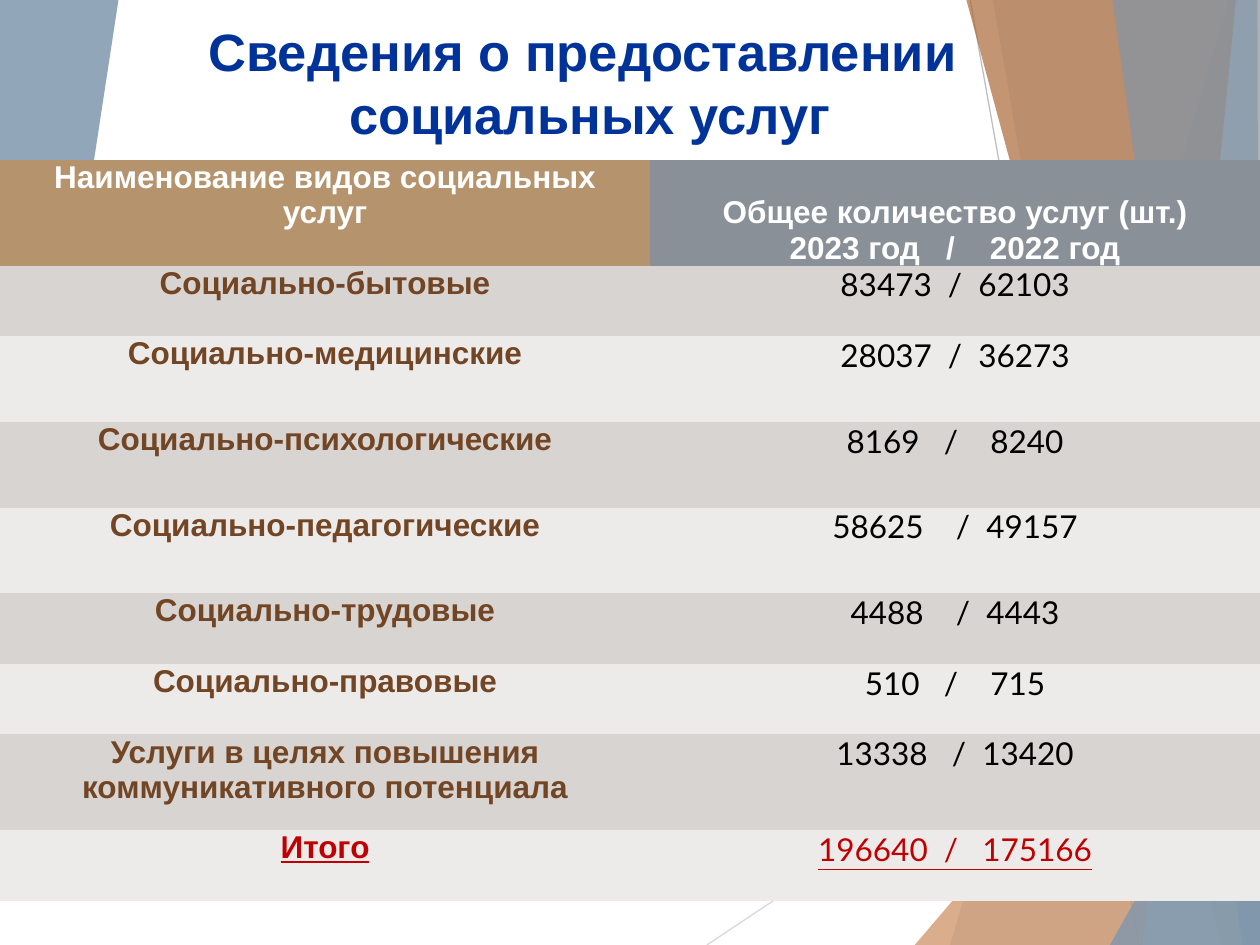
from lxml import etree
from pptx import Presentation
from pptx.dml.color import RGBColor
from pptx.enum.shapes import MSO_CONNECTOR
from pptx.enum.text import MSO_ANCHOR, PP_ALIGN
from pptx.oxml.ns import qn
from pptx.util import Inches, Pt

STRAIGHT = MSO_CONNECTOR.STRAIGHT
CENTER = PP_ALIGN.CENTER
TOP, MIDDLE, BOTTOM = MSO_ANCHOR.TOP, MSO_ANCHOR.MIDDLE, MSO_ANCHOR.BOTTOM
PLAIN_TABLE_STYLE = "{2D5ABB26-0587-4C30-8999-92F81FD0307C}"


def color(hex_string):
    return RGBColor.from_string(hex_string)


def add_run(para, text, font_name, size, hex_string, bold=False, underline=False):
    para.alignment = CENTER
    span = para.add_run()
    span.text = text
    span.font.name = font_name
    span.font.size = Pt(size)
    span.font.bold = bold
    span.font.underline = underline
    span.font.color.rgb = color(hex_string)


deck = Presentation()
deck.slide_width, deck.slide_height = Inches(10), Inches(7.5)
page = deck.slides.add_slide(deck.slide_layouts[5])

# Thin background lines
for x1, y1, x2, y2, gray in [
    (5.61, 7.5, 10.01, 4.57, "D9D9D9"),
    (7.7, 0, 9.04, 7.5, "BFBFBF"),
]:
    line = page.shapes.add_connector(
        STRAIGHT, Inches(x1), Inches(y1), Inches(x2), Inches(y2))
    line.line.color.rgb = color(gray)
    line.line.width = Pt(0.75)
    etree.SubElement(line._element.spPr, qn("a:effectLst"))

# Translucent background facets: fill, opacity in percent, corners
facets = [
    ("7E97AD", 30, [(9.75, 0), (7.54, 7.5), (10.02, 7.5), (10.01, 0)]),
    ("7E97AD", 20, [(7.88, 0), (9.19, 7.5), (10.01, 7.5), (10.01, 0)]),
    ("CC8E60", 72, [(7.26, 7.5), (10, 4.29), (10.01, 7.5)]),
    ("AA6837", 70, [(7.67, 0), (9.7, 7.5), (10.01, 7.5), (10.01, 0)]),
    ("B2C1CE", 70, [(9.81, 0), (9.07, 7.5), (10.01, 7.5), (10, 0)]),
    ("7E97AD", 65, [(8.83, 0), (9.86, 7.5), (10, 7.5), (9.98, 0)]),
    ("7E97AD", 80, [(8.81, 7.5), (10.01, 5.35), (10.01, 7.5)]),
    ("7E97AD", 85, [(-0.01, 0), (0.94, 0), (-0.01, 6.22)]),
]
for fill, opacity, corners in facets:
    points = [(Inches(x), Inches(y)) for x, y in corners]
    builder = page.shapes.build_freeform(*points[0])
    builder.add_line_segments(points[1:], close=True)
    facet = builder.convert_to_shape()
    facet.shadow.inherit = False
    facet.line.fill.background()
    facet.fill.solid()
    facet.fill.fore_color.rgb = color(fill)
    fill_color = facet._element.spPr.find(".//" + qn("a:srgbClr"))
    etree.SubElement(fill_color, qn("a:alpha"), val=str(opacity * 1000))

# Title
title = page.shapes.title
title.left, title.top = Inches(0), Inches(0.1)
title.width, title.height = Inches(9.25), Inches(1.1)
title.text_frame.vertical_anchor = MIDDLE
title.text_frame.word_wrap = True
para = title.text_frame.paragraphs[0]
para.line_spacing = Pt(36)
add_run(para, "Сведения о предоставлении", "Arial", 30, "003399", bold=True)
para.add_line_break()
add_run(para, " социальных услуг", "Arial", 30, "003399", bold=True)

# Table: row height, service, quantities
rows = [
    (0.84, "Наименование видов социальных услуг",
     "Общее количество услуг (шт.)\n2023 год   /    2022 год"),
    (0.56, "Социально-бытовые", "83473  /  62103"),
    (0.68, "Социально-медицинские", "28037  /  36273"),
    (0.68, "Социально-психологические", "8169   /    8240"),
    (0.68, "Социально-педагогические", "58625    /  49157"),
    (0.56, "Социально-трудовые", "4488    /  4443"),
    (0.56, "Социально-правовые", "510   /    715"),
    (0.76, "Услуги в целях повышения коммуникативного потенциала", "13338   /  13420"),
    (0.56, "Итого", "196640  /   175166"),
]
frame = page.shapes.add_table(
    len(rows), 2, Inches(0), Inches(1.27), Inches(10),
    Inches(sum(row[0] for row in rows)))
frame._element.find(".//" + qn("a:tableStyleId")).text = PLAIN_TABLE_STYLE
table = frame.table
table.horz_banding = False
table.columns[0].width, table.columns[1].width = Inches(5.16), Inches(4.84)

for row_index, (height, *texts) in enumerate(rows):
    table.rows[row_index].height = Inches(height)
    is_header = row_index == 0
    is_total = row_index == len(rows) - 1
    for column, text in enumerate(texts):
        cell = table.cell(row_index, column)
        cell.margin_left = cell.margin_right = Inches(0.07)
        cell.margin_top = cell.margin_bottom = 0
        cell.vertical_anchor = BOTTOM if is_header and column == 1 else TOP
        if is_header:
            fill, ink = ("B4936D", "899097")[column], "FFFFFF"
        else:
            fill = "D7D4D2" if row_index % 2 else "ECEBEA"
            ink = "C00000" if is_total else ("724524", "000000")[column]
        cell.fill.solid()
        cell.fill.fore_color.rgb = color(fill)
        is_bold = is_header or column == 0
        for line_index, line_text in enumerate(text.split("\n")):
            body = cell.text_frame
            para = body.add_paragraph() if line_index else body.paragraphs[0]
            add_run(para, line_text, "Arial" if is_bold else "Lato", 18, ink,
                    bold=is_bold, underline=is_total)

deck.save("out.pptx")
